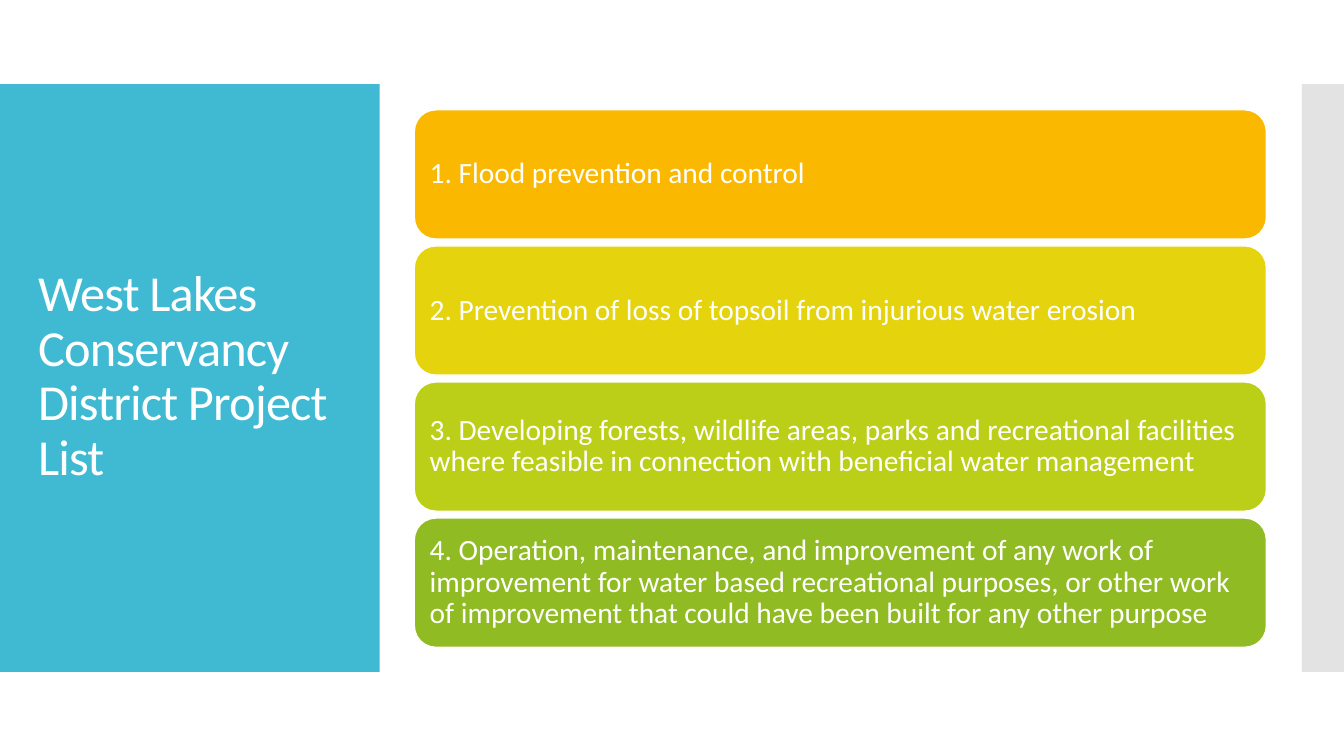
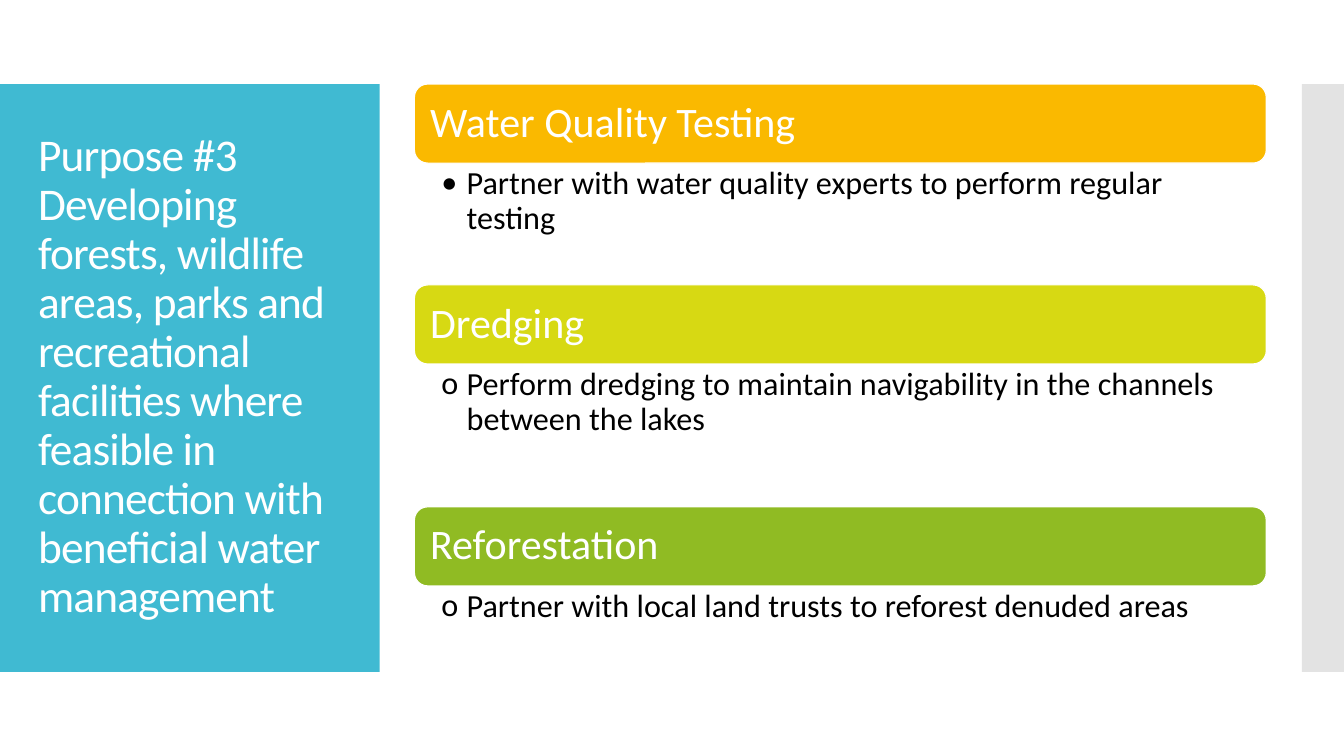
from pptx import Presentation
from pptx.dml.color import RGBColor
from pptx.enum.shapes import MSO_SHAPE as Shape
from pptx.enum.text import MSO_ANCHOR as Anchor, MSO_AUTO_SIZE as AutoSize, PP_ALIGN as Align
from pptx.oxml.ns import qn
from pptx.util import Pt
from lxml.etree import SubElement

COLORS = {
    "panel": "40BAD2",
    "edge": "C8C8C8",
    "white": "FFFFFF",
    "black": "000000",
    "orange": "FAB900",
    "yellow": "E4D30D",
    "lemon": "D7D913",
    "lime": "BCCF18",
    "green": "90BB23",
}

PURPOSES = [
    ("orange", "1. Flood prevention and control"),
    ("yellow", "2. Prevention of loss of topsoil from injurious water erosion"),
    ("lime", "3. Developing forests, wildlife areas, parks and recreational facilities "
             "where feasible in connection with beneficial water management"),
    ("green", "4. Operation, maintenance, and improvement of any work of improvement "
              "for water based recreational purposes, or other work of improvement "
              "that could have been built for any other purpose"),
]

PROJECTS = [
    ("orange", "Water Quality Testing", "•",
     "Partner with water quality experts to perform regular testing", 87),
    ("lemon", "Dredging", "o",
     "Perform dredging to maintain navigability in the channels between the lakes", 102),
    ("green", "Reforestation", "o",
     "Partner with local land trusts to reforest denuded areas", 70),
]


class Deck:
    font = "Calibri"
    band_top, band_height = 60, 420
    left, width = 296, 608.5

    def __init__(self):
        self.deck = Presentation()
        self.deck.slide_width, self.deck.slide_height = Pt(960), Pt(540)
        self.page = None

    def color(self, name):
        return RGBColor.from_string(COLORS[name])

    def add_page(self, title, size):
        self.page = self.deck.slides.add_slide(self.deck.slide_layouts[5])
        box = self.page.shapes.title
        box.left, box.top, box.width, box.height = Pt(20), Pt(88.5), Pt(232), Pt(362)
        self.set_text(box, title, size, "white", (7.2, 3.6, 7.2, 3.6))
        box.text_frame.paragraphs[0].runs[0]._r.get_or_add_rPr().set("spc", "-60")
        panel = self.block(Shape.RECTANGLE, 0, self.band_top, 271.2, self.band_height, "panel")
        edge = self.block(Shape.RECTANGLE, 930, self.band_top, 30, self.band_height, "edge")
        fill = edge.element.spPr.find(qn("a:solidFill"))
        SubElement(fill[0], qn("a:alpha"), val="50000")
        for band in (panel, edge):
            box.element.addprevious(band.element)

    def block(self, kind, left, top, width, height, fill):
        shape = self.page.shapes.add_shape(kind, Pt(left), Pt(top), Pt(width), Pt(height))
        shape.shadow.inherit = False
        shape.fill.solid()
        shape.fill.fore_color.rgb = self.color(fill)
        shape.line.fill.background()
        return shape

    def set_text(self, box, text, size, color, insets, anchor=Anchor.MIDDLE, bullet=None):
        frame = box.text_frame
        frame.word_wrap = True
        frame.auto_size = AutoSize.NONE
        frame.vertical_anchor = anchor
        (frame.margin_left, frame.margin_top,
         frame.margin_right, frame.margin_bottom) = [Pt(inset) for inset in insets]
        para = frame.paragraphs[0]
        para.text = text
        para.alignment = Align.LEFT
        para.line_spacing = 0.9
        if bullet:
            props = para._p.get_or_add_pPr()
            props.set("marL", str(Pt(18)))
            props.set("indent", str(-Pt(18)))
            SubElement(props, qn("a:buFont"), typeface=self.font)
            SubElement(props, qn("a:buChar"), char=bullet)
        para.font.name = self.font
        para.font.size = Pt(size)
        para.font.color.rgb = self.color(color)

    def card(self, top, height, fill, text, size, inset):
        shape = self.block(Shape.ROUNDED_RECTANGLE, self.left, top, self.width, height, fill)
        shape.line.color.rgb = self.color("white")
        shape.line.width = Pt(0.85)
        self.set_text(shape, text, size, "white", [inset] * 4)

    def detail(self, top, height, bullet, text):
        box = self.page.shapes.add_textbox(Pt(self.left), Pt(top), Pt(self.width), Pt(height))
        self.set_text(box, text, 23, "black", (19.3, 2.9, 16.6, 2.9), Anchor.TOP, bullet)


def main():
    deck = Deck()

    deck.add_page("West Lakes Conservancy District Project List", 36)
    for index, (fill, text) in enumerate(PURPOSES):
        deck.card(78.5 + index * 97.2, 92.2, fill, text, 21, 6.5)

    deck.add_page("Purpose #3 Developing forests, wildlife areas, parks and recreational "
                  "facilities where feasible in connection with beneficial water management", 32.4)
    top, header_height = deck.band_top, 56.5
    for fill, heading, bullet, text, height in PROJECTS:
        deck.card(top, header_height, fill, heading, 30, 8.5)
        deck.detail(top + header_height, height, bullet, text)
        top += header_height + height

    deck.deck.save("out.pptx")


if __name__ == "__main__":
    main()
